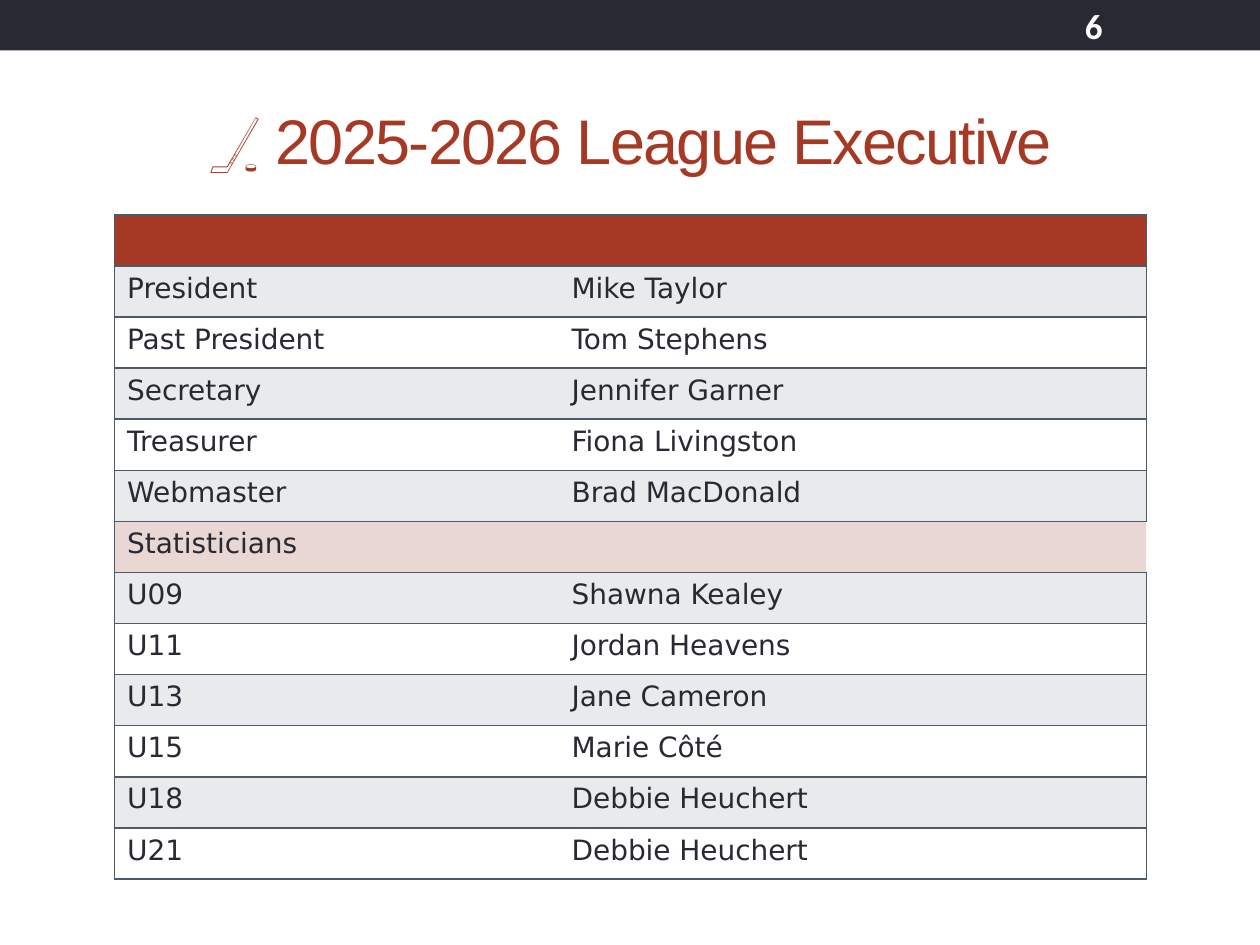
from lxml.etree import SubElement
from pptx import Presentation
from pptx.dml.color import RGBColor
from pptx.enum.shapes import MSO_SHAPE
from pptx.enum.text import MSO_ANCHOR, PP_ALIGN
from pptx.oxml.ns import qn
from pptx.util import Cm, Pt

COLORS = {
    "bar": "292934",
    "accent": "A53926",
    "band": "E9EAEB",
    "plain": "FFFFFF",
    "section": "E9D7D3",
    "border": "4C5A6A",
}
FONTS = {
    "title": {"name": "Arial", "size": Pt(36), "color": "accent"},
    "number": {"name": "Calibri", "size": Pt(20), "bold": True, "color": "plain"},
    "cell": {"name": "DejaVu Sans", "size": Pt(16), "color": "bar"},
}
NO_STYLE = "{2D5ABB26-0587-4C30-8999-92F81FD0307C}"
SECTION = "Statisticians"
EXECUTIVE = [
    ("", ""),
    ("President", "Mike Taylor"),
    ("Past President", "Tom Stephens"),
    ("Secretary", "Jennifer Garner"),
    ("Treasurer", "Fiona Livingston"),
    ("Webmaster", "Brad MacDonald"),
    (SECTION, ""),
    ("U09", "Shawna Kealey"),
    ("U11", "Jordan Heavens"),
    ("U13", "Jane Cameron"),
    ("U15", "Marie Côté"),
    ("U18", "Debbie Heuchert"),
    ("U21", "Debbie Heuchert"),
]


def color(name):
    return RGBColor.from_string(COLORS[name])


def write(para, text, style):
    span = para.add_run()
    span.text = text
    for key, value in FONTS[style].items():
        if key == "color":
            span.font.color.rgb = color(value)
        else:
            setattr(span.font, key, value)
    return span


def place(shape, left, top, width, height):
    position = {"left": left, "top": top, "width": width, "height": height}
    for key, value in position.items():
        setattr(shape, key, Cm(value))


def add_bar(page):
    bar = page.shapes.add_shape(MSO_SHAPE.RECTANGLE, 0, 0, Cm(25.4), Cm(1.02))
    bar.shadow.inherit = False
    bar.fill.solid()
    bar.fill.fore_color.rgb = color("bar")
    bar.line.fill.background()


def add_title(page, text):
    title = page.shapes.title
    place(title, 1.27, 1.88, 22.86, 1.85)
    title.text_frame.vertical_anchor = MSO_ANCHOR.MIDDLE
    para = title.text_frame.paragraphs[0]
    para.alignment = PP_ALIGN.CENTER
    span = write(para, text, "title")
    span.font._element.set("spc", "-100")


def add_page_number(page, text):
    box = page.shapes.add_textbox(Cm(21.62), Cm(0.05), Cm(2.97), Cm(0.91))
    box.text_frame.word_wrap = True
    box.text_frame.vertical_anchor = MSO_ANCHOR.MIDDLE
    write(box.text_frame.paragraphs[0], text, "number")


def add_borders(cell, sides):
    properties = cell._tc.get_or_add_tcPr()
    for side in sides:
        line = SubElement(properties, qn(f"a:ln{side}"), w=str(Pt(1)))
        fill = SubElement(line, qn("a:solidFill"))
        SubElement(fill, qn("a:srgbClr"), val=COLORS["border"])


def row_fill(index, role):
    if index == 0:
        return "accent"
    if role == SECTION:
        return "section"
    return "band" if index % 2 else "plain"


def add_executive_table(page, rows):
    frame = page.shapes.add_table(
        len(rows), 2, Cm(2.31), Cm(4.33), Cm(20.8), Cm(13.39)
    )
    table = frame.table
    table.horz_banding = False
    table._tbl.tblPr.find(qn("a:tableStyleId")).text = NO_STYLE
    for column, width in zip(table.columns, (8.96, 11.84)):
        column.width = Cm(width)
    for index, entry in enumerate(rows):
        table.rows[index].height = Cm(1.03)
        for position, text in enumerate(entry):
            cell = table.cell(index, position)
            add_borders(cell, ("LTB", "RTB")[position])
            cell.fill.solid()
            cell.fill.fore_color.rgb = color(row_fill(index, entry[0]))
            if text:
                write(cell.text_frame.paragraphs[0], text, "cell")
        if entry[0] == SECTION:
            table.cell(index, 0).merge(table.cell(index, 1))


def main():
    deck = Presentation()
    deck.slide_width, deck.slide_height = Cm(25.4), Cm(19.05)
    page = deck.slides.add_slide(deck.slide_layouts[5])
    add_bar(page)
    add_executive_table(page, EXECUTIVE)
    add_title(page, "🏒 2025-2026 League Executive")
    add_page_number(page, "6")
    deck.save("out.pptx")


if __name__ == "__main__":
    main()
